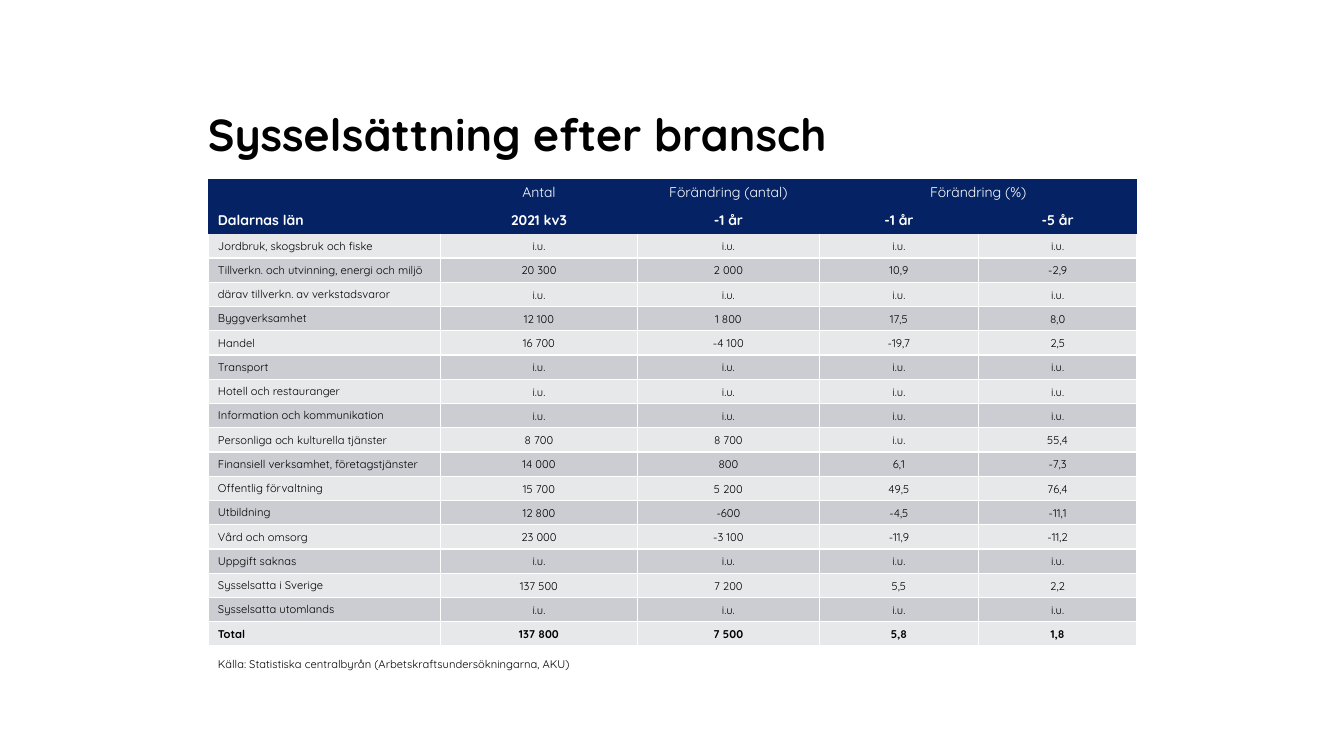
from lxml.etree import SubElement
from pptx import Presentation
from pptx.dml.color import RGBColor
from pptx.enum.text import MSO_ANCHOR, MSO_AUTO_SIZE, PP_ALIGN
from pptx.oxml.ns import qn
from pptx.util import Pt

FONT = "Quicksand"
COLORS = {
    "header": "052364",
    "light": "E7E8EA",
    "dark": "CCCDD3",
    "border": "FFFFFF",
    "white": "FFFFFF",
    "black": "000000",
}
LEFT, TABLE_TOP = 148.5, 127.6
COLUMN_WIDTHS = [166.3, 140.4, 130.2, 113.4, 113.4]
HEADER_HEIGHT, ROW_HEIGHT = 19.65, 17.32
HEADER_ROWS = [
    ("", "Antal", "Förändring (antal)", "Förändring (%)", ""),
    ("Dalarnas län", "2021 kv3", "-1 år", "-1 år", "-5 år"),
]
MISSING = ("i.u.",) * 4
INDUSTRY_ROWS = [
    ("Jordbruk, skogsbruk och fiske", *MISSING),
    ("Tillverkn. och utvinning, energi och miljö", "20 300", "2 000", "10,9", "-2,9"),
    ("därav tillverkn. av verkstadsvaror", *MISSING),
    ("Byggverksamhet", "12 100", "1 800", "17,5", "8,0"),
    ("Handel", "16 700", "-4 100", "-19,7", "2,5"),
    ("Transport", *MISSING),
    ("Hotell och restauranger", *MISSING),
    ("Information och kommunikation", *MISSING),
    ("Personliga och kulturella tjänster", "8 700", "8 700", "i.u.", "55,4"),
    ("Finansiell verksamhet, företagstjänster", "14 000", "800", "6,1", "-7,3"),
    ("Offentlig förvaltning", "15 700", "5 200", "49,5", "76,4"),
    ("Utbildning", "12 800", "-600", "-4,5", "-11,1"),
    ("Vård och omsorg", "23 000", "-3 100", "-11,9", "-11,2"),
    ("Uppgift saknas", *MISSING),
    ("Sysselsatta i Sverige", "137 500", "7 200", "5,5", "2,2"),
    ("Sysselsatta utomlands", *MISSING),
    ("Total", "137 800", "7 500", "5,8", "1,8"),
]


def write_text(tf, text, size=8, bold=False, color="black", align=PP_ALIGN.LEFT):
    p = tf.paragraphs[0]
    p.alignment = align
    p.font.size = Pt(size)
    if not text:
        return
    r = p.add_run()
    r.text = text
    r.font.name = FONT
    r.font.size = Pt(size)
    r.font.bold = bold
    r.font.color.rgb = RGBColor.from_string(COLORS[color])


def set_borders(cell, visible_sides):
    """Draw the given sides (letters of LRTB) and suppress the others."""
    tc_pr = cell._tc.get_or_add_tcPr()
    for side in "LRTB":
        ln = SubElement(tc_pr, qn(f"a:ln{side}"), w=str(Pt(1)))
        if side in visible_sides:
            fill = SubElement(ln, qn("a:solidFill"))
            SubElement(fill, qn("a:srgbClr"), val=COLORS["border"])
        else:
            SubElement(ln, qn("a:noFill"))


def format_cell(cell, fill, borders=""):
    set_borders(cell, borders)
    cell.fill.solid()
    cell.fill.fore_color.rgb = RGBColor.from_string(COLORS[fill])


def center_value(cell):
    cell.vertical_anchor = MSO_ANCHOR.MIDDLE
    cell.margin_left = cell.margin_right = cell.margin_top = Pt(0.7)
    cell.margin_bottom = 0


def add_title(s, text):
    sp = s.shapes.title
    sp.left, sp.top, sp.width, sp.height = Pt(LEFT), Pt(26.6), Pt(663.7), Pt(87.8)
    tf = sp.text_frame
    tf.auto_size = MSO_AUTO_SIZE.NONE
    tf.vertical_anchor = MSO_ANCHOR.BOTTOM
    tf.margin_left = tf.margin_right = tf.margin_top = tf.margin_bottom = 0
    write_text(tf, text, size=32, bold=True)


def add_industry_table(s):
    rows = HEADER_ROWS + INDUSTRY_ROWS
    header_count = len(HEADER_ROWS)
    heights = [HEADER_HEIGHT] * header_count + [ROW_HEIGHT] * len(INDUSTRY_ROWS)
    table = s.shapes.add_table(
        len(rows), len(COLUMN_WIDTHS), Pt(LEFT), Pt(TABLE_TOP),
        Pt(sum(COLUMN_WIDTHS)), Pt(sum(heights))).table
    table.horz_banding = False
    for column, width in zip(table.columns, COLUMN_WIDTHS):
        column.width = Pt(width)
    for i, (values, height) in enumerate(zip(rows, heights)):
        table.rows[i].height = Pt(height)
        is_header = i < header_count
        if is_header:
            fill, borders = "header", ""
        else:
            fill = "dark" if i % 2 else "light"
            borders = "LRB" if i == header_count else "LRTB"
        for j, value in enumerate(values):
            cell = table.cell(i, j)
            format_cell(cell, fill, borders)
            if i and j:
                center_value(cell)
            write_text(
                cell.text_frame, value,
                size=10 if is_header else 8,
                bold=i in (1, len(rows) - 1),
                color="white" if is_header else "black",
                align=PP_ALIGN.CENTER if j else PP_ALIGN.LEFT)
    table.cell(0, 3).merge(table.cell(0, 4))


def add_source_note(s, text):
    sp = s.shapes.add_textbox(Pt(LEFT), Pt(465.8), Pt(273.6), Pt(17.3))
    tf = sp.text_frame
    tf.word_wrap = False
    tf.auto_size = MSO_AUTO_SIZE.SHAPE_TO_FIT_TEXT
    write_text(tf, text)


def main():
    prs = Presentation()
    prs.slide_width, prs.slide_height = Pt(960), Pt(540)
    s = prs.slides.add_slide(prs.slide_layouts[5])
    add_title(s, "Sysselsättning efter bransch")
    add_industry_table(s)
    add_source_note(s, "Källa: Statistiska centralbyrån (Arbetskraftsundersökningarna, AKU)")
    prs.save("out.pptx")


if __name__ == "__main__":
    main()
